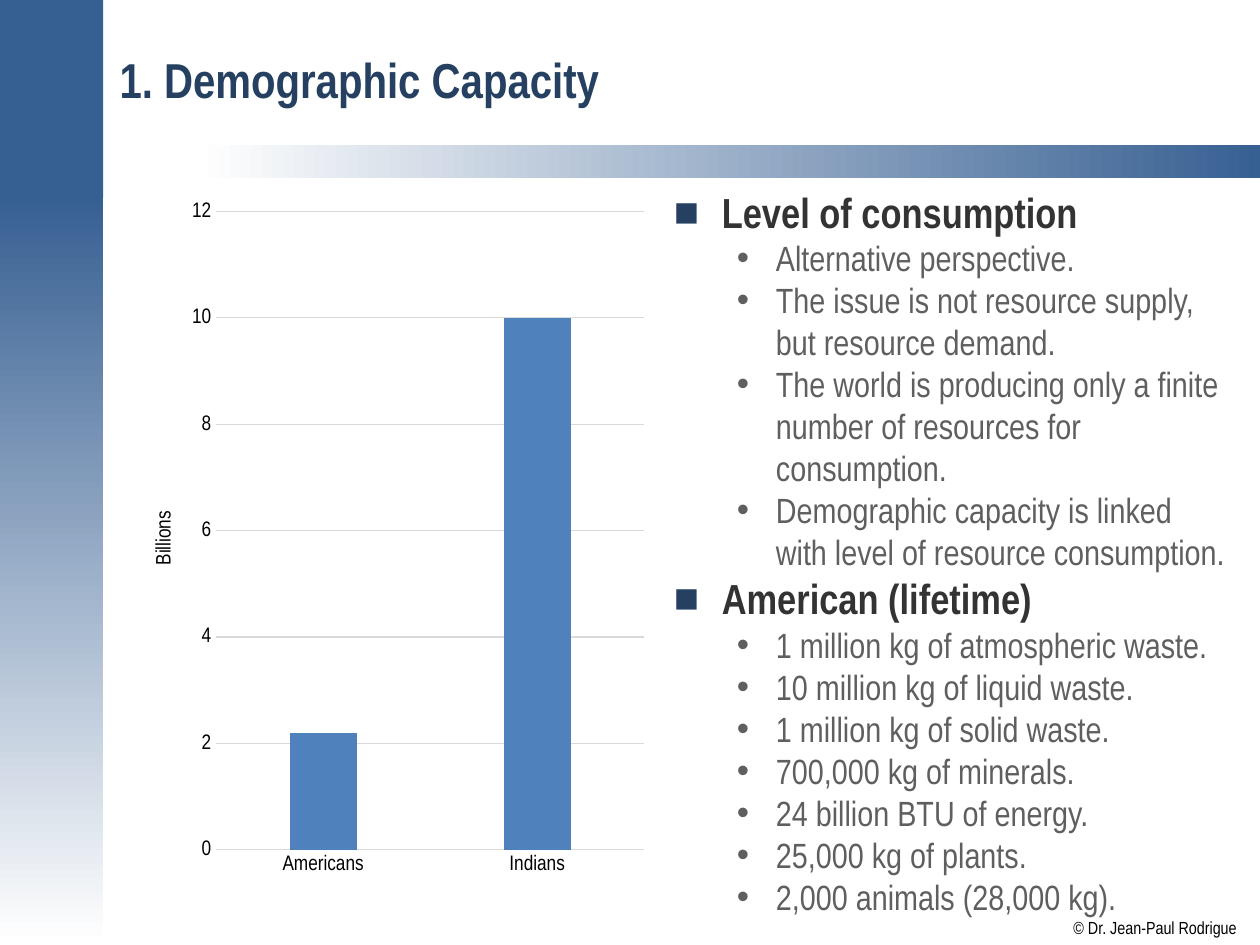
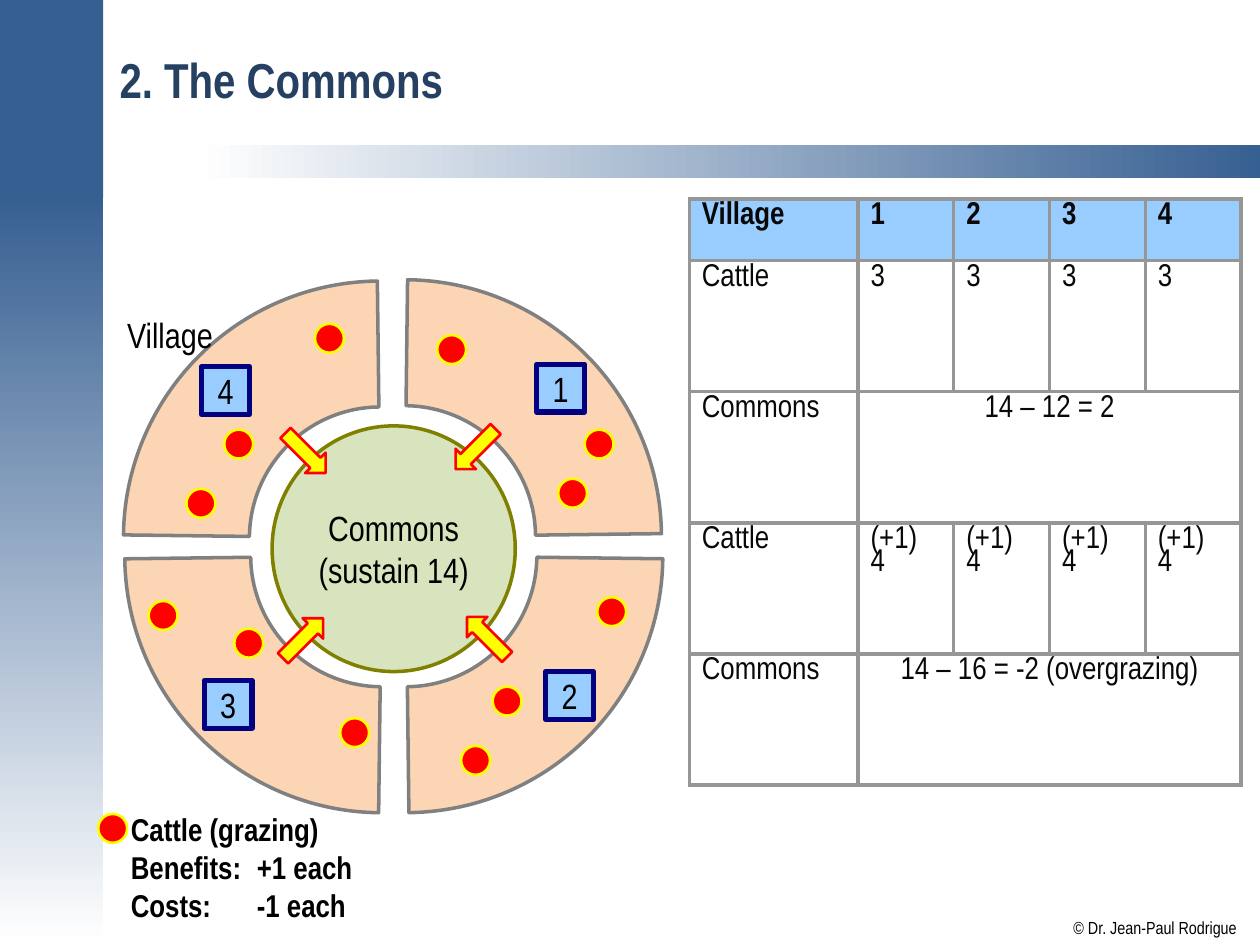
from dataclasses import dataclass
from typing import NamedTuple

from lxml.etree import SubElement
from pptx import Presentation
from pptx.chart.data import CategoryChartData
from pptx.dml.color import RGBColor
from pptx.enum.chart import XL_CHART_TYPE as Chart, XL_TICK_MARK as Tick
from pptx.enum.shapes import MSO_SHAPE as Shape
from pptx.enum.text import MSO_ANCHOR as Anchor, PP_ALIGN as Align
from pptx.oxml import parse_xml
from pptx.oxml.ns import nsdecls, qn
from pptx.util import Inches, Pt

FONT = "Arial Narrow"
COLORS = {
    "band": "376092", "title": "254061", "white": "FFFFFF", "black": "000000",
    "heading": "333333", "detail": "5F5F5F", "grid": "D9D9D9", "bar": "4F81BD",
    "cell_text": "080808", "header": "99CCFF", "border": "969696",
    "land": "FCD5B5", "land_edge": "808080", "pasture": "D7E4BD",
    "pasture_edge": "808000", "tag_edge": "000080",
    "red": "FF0000", "yellow": "FFFF00",
}

# The slide is a grid of 100 columns by 75 rows.
COLS, ROWS = 100, 75
WIDTH, HEIGHT = Inches(10), Inches(7.5)
CELL = WIDTH // COLS

TAG, COW, ARROW_W, ARROW_H, RING = 3.8, 2.3, 2.3, 4.5, 40.8


class Box(NamedTuple):
    """Left, top, width and height in columns and rows."""
    x: float
    y: float
    w: float
    h: float

    def emu(self) -> list[int]:
        return [round(v * CELL) for v in self]


@dataclass(frozen=True)
class Village:
    ring: tuple[float, float]
    tag: tuple[float, float]
    arrow: tuple[float, float]
    cattle: tuple[tuple[float, float], ...]


VILLAGES = [
    Village((11.7, 22.2), (42.6, 28.9), (36.6, 33.4),
            ((34.7, 26.6), (46.4, 34.1), (44.3, 38))),
    Village((11.8, 23.7), (43.3, 53.3), (37.5, 48.3),
            ((47.4, 47.4), (39.1, 54.5), (36.6, 59.2))),
    Village((9.9, 23.7), (16.2, 54), (22.9, 48.4),
            ((27, 57), (11.8, 47.7), (18.6, 49.9))),
    Village((9.8, 22.3), (16, 29.1), (23.1, 33.7),
            ((14.8, 38.8), (17.8, 34.1), (25, 25.7))),
]

OUTLINE = {
    "Level of consumption": [
        "Alternative perspective.",
        "The issue is not resource supply, but resource demand.",
        "The world is producing only a finite number of resources for consumption.",
        "Demographic capacity is linked with level of resource consumption.",
    ],
    "American (lifetime)": [
        "1 million kg of atmospheric waste.",
        "10 million kg of liquid waste.",
        "1 million kg of solid waste.",
        "700,000 kg of minerals.",
        "24 billion BTU of energy.",
        "25,000 kg of plants.",
        "2,000 animals (28,000 kg).",
    ],
}

TABLE = [
    ["Village", "1", "2", "3", "4"],
    ["Cattle"] + ["3"] * 4,
    ["Commons", "14 – 12 = 2"],
    ["Cattle"] + ["(+1)\n4"] * 4,
    ["Commons", "14 – 16 = -2 (overgrazing)"],
]


def rgb(name: str) -> RGBColor:
    return RGBColor.from_string(COLORS[name])


def style_font(font, size: float, color: str = "black", bold: bool = False) -> None:
    font.name, font.size, font.bold = FONT, Pt(size), bold
    font.color.rgb = rgb(color)


def add_text(tf, text: str, *, size: float, color: str = "black", bold: bool = False,
             align=Align.LEFT, spacing: float | None = None, first: bool = True) -> list:
    """Write one paragraph per line of text; first reuses the empty paragraph."""
    paragraphs = []
    for i, line in enumerate(text.split("\n")):
        p = tf.paragraphs[0] if first and i == 0 else tf.add_paragraph()
        p.alignment = align
        if spacing:
            p.line_spacing = spacing
        r = p.add_run()
        r.text = line
        style_font(r.font, size, color, bold)
        paragraphs.append(p)
    return paragraphs


def add_box(s, box: Box, text: str, *, anchor=Anchor.TOP, wrap: bool = False,
            inset: bool = True, **fmt):
    tf = s.shapes.add_textbox(*box.emu()).text_frame
    tf.word_wrap, tf.vertical_anchor = wrap, anchor
    if not inset:
        tf.margin_left = tf.margin_right = tf.margin_top = tf.margin_bottom = 0
    add_text(tf, text, **fmt)


def add_shape(s, kind, box: Box, fill: str | None, edge: str | None = None,
              weight: float = 1.5, rotation: float = 0, text: str = ""):
    sp = s.shapes.add_shape(kind, *box.emu())
    sp.shadow.inherit = False
    sp.rotation = rotation
    if fill:
        sp.fill.solid()
        sp.fill.fore_color.rgb = rgb(fill)
    if edge:
        sp.line.color.rgb = rgb(edge)
        sp.line.width = Pt(weight)
    else:
        sp.line.fill.background()
    if text:
        tf = sp.text_frame
        tf.word_wrap, tf.vertical_anchor = False, Anchor.MIDDLE
        add_text(tf, text, size=20, align=Align.CENTER)
    return sp


def add_gradient(s, box: Box, start: str, end: str, angle: float) -> None:
    fill = add_shape(s, Shape.RECTANGLE, box, None).fill
    fill.gradient()
    fill.gradient_angle = angle
    for stop, color in zip(fill.gradient_stops, (start, end)):
        stop.color.rgb = rgb(color)


def add_slide(prs, title: str):
    """Add a slide with the shared bands, copyright line and title."""
    s = prs.slides.add_slide(prs.slide_layouts[6])
    add_gradient(s, Box(-0.1, 15.7, 8.3, 59.3), "band", "white", 270)
    add_gradient(s, Box(15.7, 11.5, 84.3, 2.6), "white", "band", 0)
    add_shape(s, Shape.RECTANGLE, Box(-0.1, -0.1, 8.3, 15.8), "band")
    add_box(s, Box(85.2, 72.8, 13, 1.7), "© Dr. Jean-Paul Rodrigue", inset=False, size=10)
    add_box(s, Box(8.5, 1.1, 89.8, 10.4), title, anchor=Anchor.MIDDLE, wrap=True,
            size=28, color="title", bold=True)
    return s


def set_bullet(p, char: str, margin: float, hanging: float, color: str) -> None:
    pPr = p._p.get_or_add_pPr()
    pPr.set("marL", str(Inches(margin)))
    pPr.set("indent", str(-Inches(hanging)))
    SubElement(SubElement(pPr, qn("a:buClr")), qn("a:srgbClr"), val=COLORS[color])
    SubElement(pPr, qn("a:buFont"), typeface="Arial")
    SubElement(pPr, qn("a:buChar"), char=char)


def add_outline(s, box: Box) -> None:
    tf = s.shapes.add_textbox(*box.emu()).text_frame
    tf.word_wrap = True
    for i, (heading, details) in enumerate(OUTLINE.items()):
        for p in add_text(tf, heading, size=24, color="heading", bold=True, first=i == 0):
            set_bullet(p, "■", 0.38, 0.38, "title")
        for p in add_text(tf, "\n".join(details), size=20, color="detail", first=False):
            p.level = 1
            set_bullet(p, "•", 0.81, 0.31, "detail")


def set_plot_layout(chart, **shares: float) -> None:
    """Place the inner plot area by shares of the chart's size."""
    area = chart._chartSpace.chart.plotArea
    for old in area.findall(qn("c:layout")):
        area.remove(old)
    modes = '<c:layoutTarget val="inner"/><c:xMode val="edge"/><c:yMode val="edge"/>'
    sizes = "".join(f'<c:{k} val="{v}"/>' for k, v in shares.items())
    area.insert(0, parse_xml(
        f'<c:layout {nsdecls("c")}><c:manualLayout>{modes}{sizes}</c:manualLayout></c:layout>'))


def add_capacity_chart(s, box: Box) -> None:
    data = CategoryChartData()
    data.categories = ["Americans", "Indians"]
    data.add_series("Series 1", [2.2, 10])
    chart = s.shapes.add_chart(Chart.COLUMN_CLUSTERED, *box.emu(), data).chart
    chart.has_legend = chart.has_title = False
    style_font(chart.font, 10)
    set_plot_layout(chart, x=0.2, y=0.043, w=0.767, h=0.875)

    plot = chart.plots[0]
    plot.gap_width, plot.overlap, plot.vary_by_categories = 219, -27, False
    fill = plot.series[0].format.fill
    fill.solid()
    fill.fore_color.rgb = rgb("bar")

    cats, vals = chart.category_axis, chart.value_axis
    for axis in (cats, vals):
        axis.major_tick_mark = axis.minor_tick_mark = Tick.NONE
        style_font(axis.tick_labels.font, 12)
    vals.minimum_scale, vals.maximum_scale, vals.major_unit = 0, 12, 2
    vals.format.line.fill.background()
    for line in (cats.format.line, vals.major_gridlines.format.line):
        line.color.rgb = rgb("grid")
        line.width = Pt(0.75)
    add_text(vals.axis_title.text_frame, "Billions", size=12)


def set_borders(cell) -> None:
    tcPr = cell._tc.get_or_add_tcPr()
    for i, side in enumerate(("lnL", "lnR", "lnT", "lnB")):
        tcPr.insert(i, parse_xml(
            f'<a:{side} {nsdecls("a")} w="{Pt(2.25)}"><a:solidFill>'
            f'<a:srgbClr val="{COLORS["border"]}"/></a:solidFill></a:{side}>'))


def add_grazing_table(s, box: Box) -> None:
    count = len(TABLE[0])
    table = s.shapes.add_table(len(TABLE), count, *box.emu()).table
    for i, col in enumerate(table.columns):
        col.width = round((7.6 if i else 13.4) * CELL)
    for i, row in enumerate(table.rows):
        row.height = round((10.4 if i else 4.9) * CELL)
    for i, texts in enumerate(TABLE):
        for j in range(count):
            cell = table.cell(i, j)
            set_borders(cell)
            if i == 0:
                cell.fill.solid()
                cell.fill.fore_color.rgb = rgb("header")
            else:
                cell.fill.background()
        merged = len(texts) < count
        if merged:
            table.cell(i, 1).merge(table.cell(i, count - 1))
        for j, text in enumerate(texts):
            add_text(table.cell(i, j).text_frame, text, size=18, color="cell_text",
                     bold=i == 0, spacing=0.8,
                     align=Align.CENTER if merged and j else Align.LEFT)


def add_cow(s, x: float, y: float) -> None:
    add_shape(s, Shape.OVAL, Box(x, y, COW, COW), "red", "yellow")


def add_commons(s) -> None:
    """Draw the four villages around the shared pasture."""
    turns = [45 + 90 * i for i in range(len(VILLAGES))]
    for v, turn in zip(VILLAGES, turns):
        ring = add_shape(s, Shape.BLOCK_ARC, Box(*v.ring, RING, RING), "land",
                         "land_edge", 2, turn)
        # Angles are stored in 60000ths of a degree, adjustments in 100000ths.
        for i, value in enumerate((225.7 * 0.6, 314.3 * 0.6, 0.245)):
            ring.adjustments[i] = value
    add_shape(s, Shape.OVAL, Box(21.6, 33.8, 19.3, 19.5), "pasture", "pasture_edge", 2,
              text="Commons\n(sustain 14)")
    add_box(s, Box(9.1, 24.4, 8.9, 4.4), "Village", size=20)
    for number, (v, turn) in enumerate(zip(VILLAGES, turns), 1):
        add_shape(s, Shape.RECTANGLE, Box(*v.tag, TAG, TAG), "header", "tag_edge", 3,
                  text=str(number))
        add_shape(s, Shape.DOWN_ARROW, Box(*v.arrow, ARROW_W, ARROW_H), "yellow", "red",
                  rotation=turn)
        for cow in v.cattle:
            add_cow(s, *cow)
    add_box(s, Box(9.4, 63.8, 19.6, 10),
            "Cattle (grazing)\nBenefits:\t+1 each\nCosts:\t-1 each", size=18, bold=True)
    add_cow(s, 7.8, 64.6)


def main() -> None:
    prs = Presentation()
    prs.slide_width, prs.slide_height = WIDTH, HEIGHT

    s = add_slide(prs, "1. Demographic Capacity")
    add_capacity_chart(s, Box(8.3, 14.3, 44.3, 57.9))
    add_outline(s, Box(52.5, 14.3, 45.9, 57.9))

    s = add_slide(prs, "2. The Commons")
    add_grazing_table(s, Box(54.7, 15.8, 43.8, 46.5))
    add_commons(s)

    prs.save("out.pptx")


if __name__ == "__main__":
    main()
